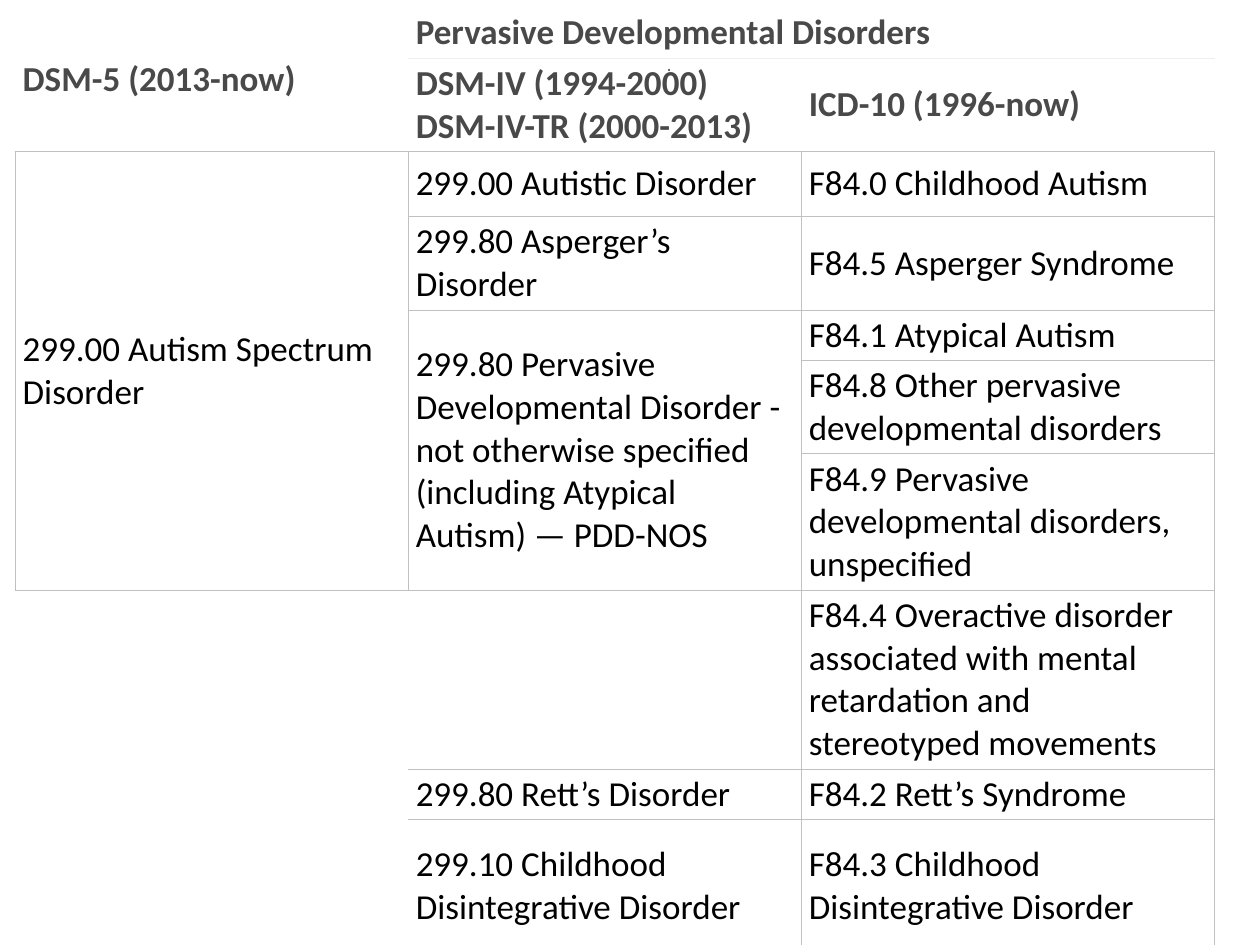
from lxml.etree import SubElement
from pptx import Presentation
from pptx.dml.color import RGBColor
from pptx.enum.text import MSO_ANCHOR, PP_ALIGN
from pptx.oxml.ns import qn
from pptx.util import Inches, Pt

WHITE = RGBColor(0xFF, 0xFF, 0xFF)
BLACK = RGBColor(0, 0, 0)
HEADING = RGBColor(0x49, 0x49, 0x49)
DOT = RGBColor(0x55, 0x55, 0x55)
GREY = RGBColor(0xC0, 0xC0, 0xC0)
LIGHT = RGBColor(0xEE, 0xEE, 0xEE)

LEFT, TOP = 0.12, 0.06
COL_WIDTHS = [3.12, 3.12, 3.28]
LINE_HEIGHT, PADDING = 0.34, 0.06
HEADER_ROWS = 2
ROW_HEIGHTS = [LINE_HEIGHT * lines + PADDING for lines in (1, 2)]
ROW_HEIGHTS += [0.52]
ROW_HEIGHTS += [LINE_HEIGHT * lines + PADDING for lines in (2, 1, 2, 3, 4, 1)]
ROW_HEIGHTS += [1.06]

BOX = dict.fromkeys("LRTB", GREY)
OPEN_LEFT = dict.fromkeys("RTB", GREY)
UNDER_TITLE = {"T": LIGHT, "B": GREY}

# row, column, row span, column span, borders, text
CELLS = [
    (0, 0, 2, 1, {"B": GREY}, "DSM-5 (2013-now)"),
    (0, 1, 1, 2, {"B": LIGHT}, "Pervasive Developmental Disorders"),
    (1, 1, 1, 1, UNDER_TITLE, "DSM-IV (1994-2000)\vDSM-IV-TR (2000-2013)"),
    (1, 2, 1, 1, UNDER_TITLE, "ICD-10 (1996-now)"),
    (2, 0, 5, 1, BOX, "299.00 Autism Spectrum Disorder"),
    (2, 1, 1, 1, BOX, "299.00 Autistic Disorder"),
    (3, 1, 1, 1, BOX, "299.80 Asperger’s Disorder"),
    (4, 1, 3, 1, BOX, "299.80 Pervasive Developmental Disorder - not otherwise "
                      "specified (including Atypical Autism) — PDD-NOS"),
    (7, 0, 3, 1, {"T": GREY}, ""),
    (7, 1, 1, 1, OPEN_LEFT, ""),
    (8, 1, 1, 1, OPEN_LEFT, "299.80 Rett’s Disorder"),
    (9, 1, 1, 1, OPEN_LEFT, "299.10 Childhood Disintegrative Disorder"),
]
ICD_CODES = [
    "F84.0 Childhood Autism",
    "F84.5 Asperger Syndrome",
    "F84.1 Atypical Autism",
    "F84.8 Other pervasive developmental disorders",
    "F84.9 Pervasive developmental disorders, unspecified",
    "F84.4 Overactive disorder associated with mental retardation and "
    "stereotyped movements",
    "F84.2 Rett’s Syndrome",
    "F84.3 Childhood Disintegrative Disorder",
]
CELLS += [(row, 2, 1, 1, BOX, text)
          for row, text in enumerate(ICD_CODES, HEADER_ROWS)]


def style_run(r, font, size, color, bold=False):
    r.font.name, r.font.size, r.font.bold = font, Pt(size), bold
    r.font.color.rgb = color


def set_borders(cell, borders):
    """Draw the given sides and leave the others without a line."""
    tc_pr = cell._tc.get_or_add_tcPr()
    for side in "LRTB":
        ln = SubElement(tc_pr, qn(f"a:ln{side}"), w=str(Pt(0.6)))
        if side in borders:
            fill = SubElement(ln, qn("a:solidFill"))
            SubElement(fill, qn("a:srgbClr"), val=str(borders[side]))
        else:
            SubElement(ln, qn("a:noFill"))


def fill_region(table, row, col, row_span, col_span, borders, text):
    last_row, last_col = row + row_span - 1, col + col_span - 1
    for r in range(row, last_row + 1):
        for c in range(col, last_col + 1):
            outer = {"L": c == col, "R": c == last_col,
                     "T": r == row, "B": r == last_row}
            cell = table.cell(r, c)
            set_borders(cell, {side: color for side, color in borders.items()
                               if outer[side]})
            cell.fill.solid()
            cell.fill.fore_color.rgb = WHITE

    cell = table.cell(row, col)
    if row_span * col_span > 1:
        cell.merge(table.cell(last_row, last_col))
    cell.vertical_anchor = MSO_ANCHOR.MIDDLE
    cell.margin_left = cell.margin_right = Inches(PADDING)
    cell.margin_top = cell.margin_bottom = Inches(PADDING / 2)
    cell.text_frame.text = text
    header = row < HEADER_ROWS
    for r in cell.text_frame.paragraphs[0].runs:
        style_run(r, "Calibri", 20, HEADING if header else BLACK, header)


def add_disorder_table(s):
    table = s.shapes.add_table(
        len(ROW_HEIGHTS), len(COL_WIDTHS), Inches(LEFT), Inches(TOP),
        Inches(sum(COL_WIDTHS)), Inches(sum(ROW_HEIGHTS))).table
    table.first_row = table.horz_banding = False
    for column, width in zip(table.columns, COL_WIDTHS):
        column.width = Inches(width)
    for row, height in zip(table.rows, ROW_HEIGHTS):
        row.height = Inches(height)
    for region in CELLS:
        fill_region(table, *region)


def add_dot(s):
    tf = s.shapes.add_textbox(Inches(0.35), Inches(0.36),
                              Inches(9.92), Inches(0.29)).text_frame
    tf.word_wrap = True
    tf.vertical_anchor = MSO_ANCHOR.MIDDLE
    tf.text = "."
    p = tf.paragraphs[0]
    p.alignment = PP_ALIGN.CENTER
    style_run(p.runs[0], "Cambria", 11, DOT)


def main():
    prs = Presentation()
    prs.slide_width, prs.slide_height = Inches(10), Inches(7.5)
    s = prs.slides.add_slide(prs.slide_layouts[6])
    add_disorder_table(s)
    add_dot(s)
    prs.save("out.pptx")


if __name__ == "__main__":
    main()
